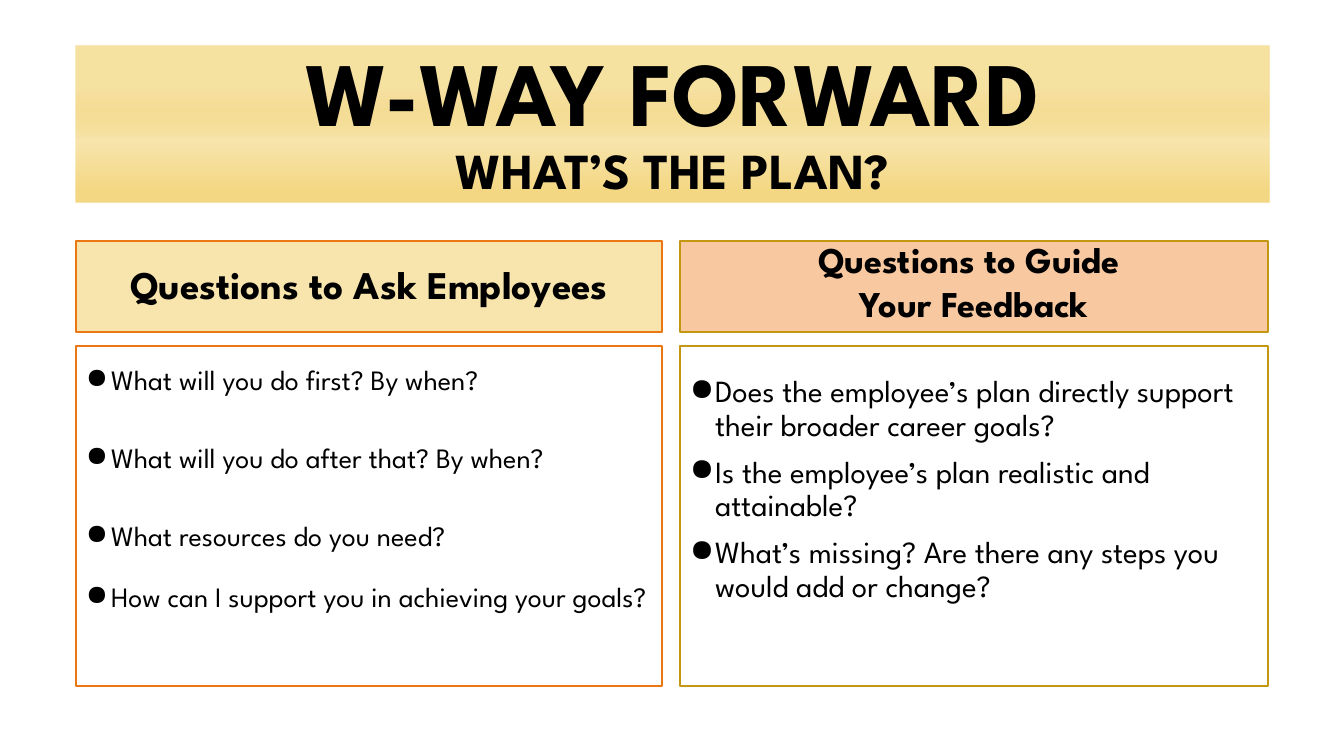
import pptx
import pptx.util
import pptx.dml.color
import pptx.enum.shapes
import pptx.enum.text
import pptx.oxml
import pptx.oxml.ns
from dataclasses import dataclass

SCALE = 914400 / 100.8  # EMU in one px


@dataclass(frozen=True)
class Theme:
    font: str = "League Spartan"
    ink: str = "000000"
    cream: str = "F7E5AD"
    peach: str = "F8C9A0"
    orange: str = "EB7712"
    gold: str = "C49712"
    # Banner stops: position, colour, opacity (all in percent)
    stops: tuple = ((28, "ECBD31", 45), (60, "F7E5AD", 100), (92, "F4D783", 100))
    title: float = 64.8
    sub: float = 36
    line: float = 1.5
    gap: float = 10


THEME = Theme()


def px(num):
    return pptx.util.Emu(round(num * SCALE))


def rgb(code):
    return pptx.dml.color.RGBColor.from_string(code)


def style(run, size, bold):
    font = run.font
    font.name, font.size, font.bold = THEME.font, pptx.util.Pt(size), bold
    font.color.rgb = rgb(THEME.ink)


def add_mark(para):
    """Give a paragraph a hanging round bullet."""
    props = para._p.get_or_add_pPr()
    indent = pptx.util.Inches(0.25)
    props.set("marL", str(indent))
    props.set("indent", str(-indent))
    mark = pptx.oxml.parse_xml(
        f'<a:buChar {pptx.oxml.ns.nsdecls("a")} char="●"/>')
    props.append(mark)


def add_box(slide, area, line, fill=None):
    kind = pptx.enum.shapes.MSO_SHAPE.RECTANGLE
    box = slide.shapes.add_shape(kind, *map(px, area))
    box.shadow.inherit = False
    box.line.color.rgb = rgb(line)
    box.line.width = pptx.util.Pt(THEME.line)
    if fill:
        box.fill.solid()
        box.fill.fore_color.rgb = rgb(fill)
    else:
        box.fill.background()
    return box


def fill_text(box, lines, size, space, align, bold=False):
    """Write the lines as paragraphs and yield each one."""
    frame = box.text_frame
    frame.word_wrap = True
    frame.margin_left = frame.margin_right = pptx.util.Inches(0.1)
    frame.margin_bottom = pptx.util.Inches(0.05)
    frame.text = "\n".join(lines)
    for i, para in enumerate(frame.paragraphs):
        para.alignment = align
        para.line_spacing = space
        para.space_before = pptx.util.Pt(THEME.gap if i else 0)
        style(para.runs[0], size, bold)
    return frame


def add_head(slide, area, line, fill, lines, size, space):
    box = add_box(slide, area, line, fill)
    frame = fill_text(box, lines, size, space,
                      pptx.enum.text.PP_ALIGN.CENTER, True)
    frame.margin_top = pptx.util.Inches(0.05)
    frame.vertical_anchor = pptx.enum.text.MSO_ANCHOR.MIDDLE


def add_list(slide, area, line, items, size, top):
    """Add a bullet list; each item is its text and the space after it."""
    box = add_box(slide, area, line)
    frame = fill_text(box, [text for text, _ in items], size, 0.9,
                      pptx.enum.text.PP_ALIGN.LEFT)
    frame.margin_top = pptx.util.Inches(top)
    frame.vertical_anchor = pptx.enum.text.MSO_ANCHOR.TOP
    for para, (_, after) in zip(frame.paragraphs, items):
        para.space_after = pptx.util.Pt(after)
        add_mark(para)


def fade(shape):
    """Fill a shape with the banner gradient, top to bottom."""
    stops = "".join(
        f'<a:gs pos="{pos * 1000}"><a:srgbClr val="{code}">'
        f'<a:alpha val="{alpha * 1000}"/></a:srgbClr></a:gs>'
        for pos, code, alpha in THEME.stops)
    grad = pptx.oxml.parse_xml(
        f'<a:gradFill {pptx.oxml.ns.nsdecls("a")} rotWithShape="1">'
        f'<a:gsLst>{stops}</a:gsLst><a:lin ang="5400000" scaled="0"/>'
        '</a:gradFill>')
    shape.fill.background()
    blank = shape._element.spPr.find(pptx.oxml.ns.qn("a:noFill"))
    blank.getparent().replace(blank, grad)


def set_title(slide, area, main_text, sub_text):
    title = slide.shapes.title
    title.left, title.top, title.width, title.height = map(px, area)
    fade(title)
    frame = title.text_frame
    frame.word_wrap = True
    frame.auto_size = pptx.enum.text.MSO_AUTO_SIZE.NONE
    frame.vertical_anchor = pptx.enum.text.MSO_ANCHOR.MIDDLE
    para = frame.paragraphs[0]
    para.text = f"{main_text}\v{sub_text}"
    para.alignment = pptx.enum.text.PP_ALIGN.CENTER
    para.line_spacing = 0.9
    for run, size in zip(para.runs, (THEME.title, THEME.sub)):
        style(run, size, True)


def main():
    deck = pptx.Presentation()
    deck.slide_width, deck.slide_height = px(1344), px(756)
    slide = deck.slides.add_slide(deck.slide_layouts[5])

    # Banner
    set_title(slide, (76, 46, 1193, 157), "W-WAY FORWARD", "WHAT’S THE PLAN?")

    # Shared rows and columns
    left, right = (76, 586), (680, 588)
    head, body = (241, 91), (346, 340)

    def cell(col, row):
        return col[0], row[0], col[1], row[1]

    # Employee questions
    add_head(slide, cell(left, head), THEME.orange, THEME.cream,
             ["Questions to Ask Employees"], 28, 0.9)
    add_list(slide, cell(left, body), THEME.orange, [
        ("What will you do first? By when?", 24),
        ("What will you do after that? By when?", 24),
        ("What resources do you need?", 12),
        ("How can I support you in achieving your goals?", 0),
    ], 20, 0.2)

    # Feedback questions
    add_head(slide, cell(right, head), THEME.gold, THEME.peach,
             ["Questions to Guide ", "Your Feedback"], 25.9, 0.7)
    add_list(slide, cell(right, body), THEME.gold, [
        ("Does the employee’s plan directly support their broader career goals?", 0),
        ("Is the employee’s plan realistic and attainable?", 0),
        ("What’s missing? Are there any steps you would add or change?", 0),
    ], 22, 0.3)

    deck.save("out.pptx")


if __name__ == "__main__":
    main()
